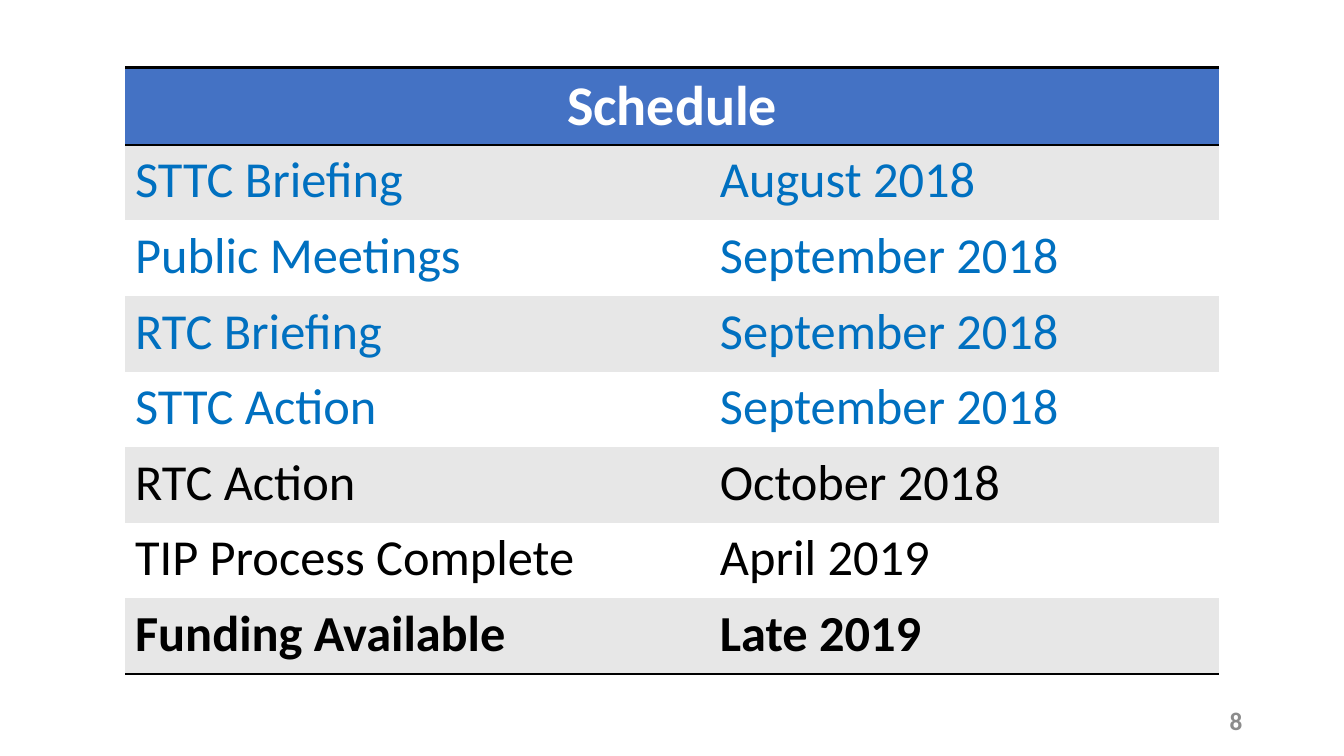
from typing import NamedTuple

from lxml.etree import SubElement
from pptx import Presentation
from pptx.dml.color import RGBColor
from pptx.enum.text import MSO_ANCHOR, PP_ALIGN
from pptx.oxml.ns import qn
from pptx.slide import Slide
from pptx.table import _Cell as Cell
from pptx.text.text import TextFrame
from pptx.util import Inches, Pt

WHITE = RGBColor(0xFF, 0xFF, 0xFF)
BLACK = RGBColor(0, 0, 0)
GRAY = RGBColor(0x8C, 0x8C, 0x8C)
BAND = RGBColor(0xE7, 0xE7, 0xE7)
HEADER = RGBColor(0x44, 0x72, 0xC4)
BLUE = RGBColor(0x00, 0x70, 0xC0)
COLUMN_WIDTHS = (5.8, 5.05)
ROW_HEIGHT = 0.75


class Milestone(NamedTuple):
    name: str
    date: str
    color: RGBColor = BLACK
    bold: bool = False


MILESTONES = (
    Milestone("STTC Briefing", "August 2018", BLUE),
    Milestone("Public Meetings", "September 2018", BLUE),
    Milestone("RTC Briefing", "September 2018", BLUE),
    Milestone("STTC Action", "September 2018", BLUE),
    Milestone("RTC Action", "October 2018"),
    Milestone("TIP Process Complete", "April 2019"),
    Milestone("Funding Available", "Late 2019", bold=True),
)


def write(frame: TextFrame, text: str, *, size: int, color: RGBColor,
          bold: bool = False, align: PP_ALIGN = PP_ALIGN.LEFT) -> None:
    paragraph = frame.paragraphs[0]
    paragraph.alignment = align
    run = paragraph.add_run()
    run.text = text
    run.font.name = "Calibri"
    run.font.size = Pt(size)
    run.font.bold = bold
    run.font.color.rgb = color


def format_cell(cell: Cell, fill: RGBColor, ruled: str) -> None:
    """Fill the cell and rule only the sides named in ruled (L, R, T, B)."""
    properties = cell._tc.get_or_add_tcPr()
    for side in "LRTB":
        line = SubElement(properties, qn(f"a:ln{side}"))
        if side in ruled:
            line.set("w", str(Pt(2)))
            solid = SubElement(line, qn("a:solidFill"))
            SubElement(solid, qn("a:srgbClr"), val=str(BLACK))
        else:
            SubElement(line, qn("a:noFill"))
    cell.fill.solid()
    cell.fill.fore_color.rgb = fill


def add_schedule(slide: Slide) -> None:
    row_count = len(MILESTONES) + 1
    table = slide.shapes.add_table(
        row_count, len(COLUMN_WIDTHS), Inches(1.24), Inches(0.67),
        Inches(sum(COLUMN_WIDTHS)), Inches(ROW_HEIGHT * row_count)).table
    for column, width in zip(table.columns, COLUMN_WIDTHS):
        column.width = Inches(width)

    for cell in table.rows[0].cells:
        format_cell(cell, HEADER, "TB")
    title = table.cell(0, 0)
    title.merge(table.cell(0, 1))
    title.vertical_anchor = MSO_ANCHOR.MIDDLE
    write(title.text_frame, "Schedule", size=40, color=WHITE, bold=True,
          align=PP_ALIGN.CENTER)

    for row, milestone in enumerate(MILESTONES, start=1):
        ruled = {1: "T", len(MILESTONES): "B"}.get(row, "")
        for column, text in enumerate((milestone.name, milestone.date)):
            cell = table.cell(row, column)
            format_cell(cell, BAND if row % 2 else WHITE, ruled)
            write(cell.text_frame, text, size=36, color=milestone.color,
                  bold=milestone.bold)


def add_page_number(slide: Slide) -> None:
    box = slide.shapes.add_textbox(Inches(9.42), Inches(6.95), Inches(3), Inches(0.4))
    frame = box.text_frame
    frame.word_wrap = True
    frame.vertical_anchor = MSO_ANCHOR.MIDDLE
    write(frame, "8", size=18, color=GRAY, bold=True, align=PP_ALIGN.RIGHT)


def main() -> None:
    presentation = Presentation()
    presentation.slide_width = Inches(13.33)
    presentation.slide_height = Inches(7.5)
    slide = presentation.slides.add_slide(presentation.slide_layouts.get_by_name("Blank"))
    add_page_number(slide)
    add_schedule(slide)
    presentation.save("out.pptx")


if __name__ == "__main__":
    main()
